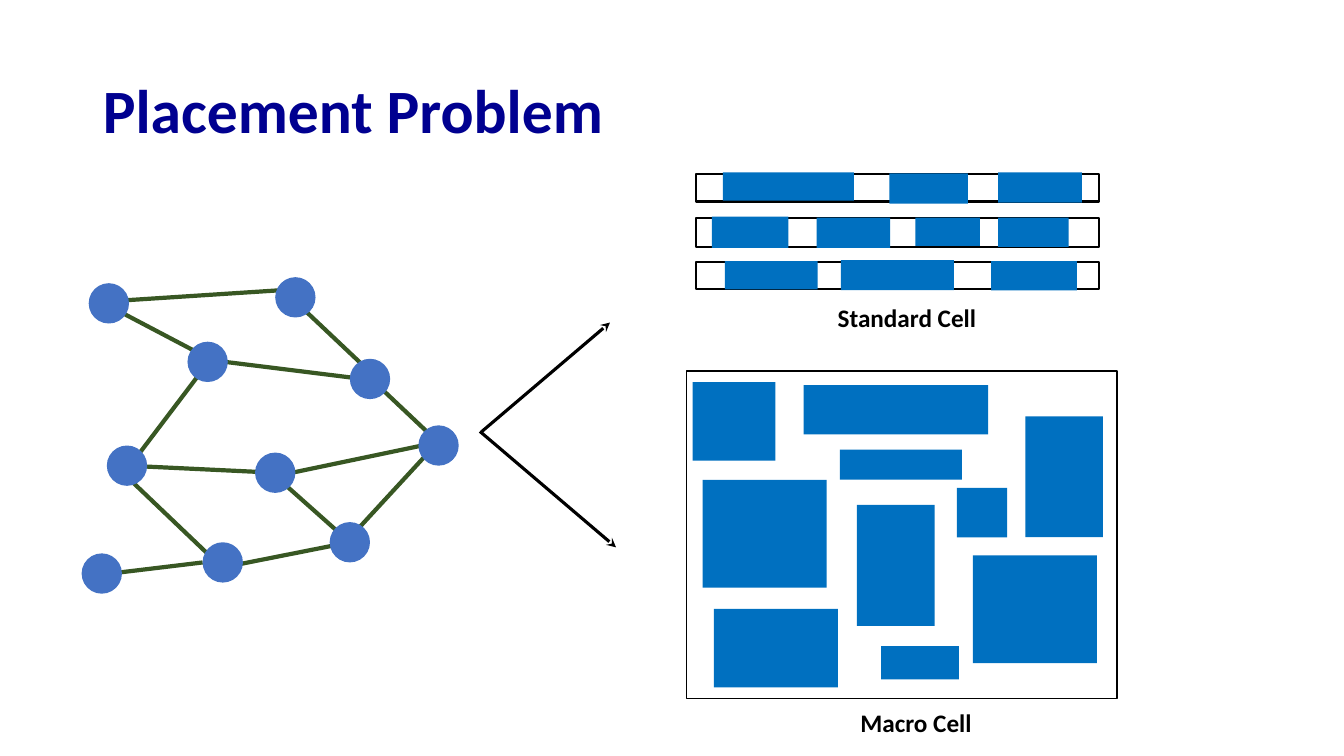
import pptx
import pptx.dml.color
import pptx.enum.shapes
import pptx.enum.text
import pptx.oxml.ns
import pptx.util
from lxml import etree
from pptx.util import Inches

COLORS = {
    "title": "000090",
    "node": "4472C4",
    "edge": "385723",
    "cell": "0070C0",
    "black": "000000",
}
FONT = "Calibri"
NODE_SIZE = 0.4

NODES = [
    (1.86, 3.39), (3.47, 3.56), (2.01, 5.38), (2.53, 4.49), (2.73, 2.75),
    (3.27, 5.18), (4.15, 4.22), (1.06, 4.42), (0.88, 2.81), (0.81, 5.49),
]
EDGES = [
    (0.93, 5.71, 2.01, 5.58), (1.08, 2.99, 2.93, 2.87), (1.09, 3.04, 2.06, 3.55),
    (1.27, 4.74, 2.15, 5.58), (1.26, 4.62, 2.73, 4.69), (1.32, 4.58, 2.07, 3.59),
    (2.15, 3.58, 3.6, 3.76), (2.95, 3.01, 3.67, 3.69), (2.75, 4.74, 3.47, 5.38),
    (2.26, 5.62, 3.47, 5.38), (3.41, 5.4, 4.35, 4.38), (2.8, 4.71, 4.33, 4.39),
    (3.66, 3.74, 4.38, 4.42),
]
ARROWS = [(4.78, 4.28, 6.05, 3.2), (4.76, 4.28, 6.11, 5.43)]
ROWS = [(6.9, 1.73, 4, 0.27), (6.9, 2.16, 4, 0.29), (6.9, 2.6, 4, 0.27)]
STANDARD_CELLS = [
    (7.17, 1.71, 1.3, 0.28), (8.82, 1.72, 0.78, 0.3), (9.9, 1.71, 0.83, 0.3),
    (7.06, 2.15, 0.76, 0.31), (8.1, 2.16, 0.73, 0.3), (9.08, 2.16, 0.64, 0.28),
    (9.9, 2.16, 0.7, 0.29),
    (7.19, 2.59, 0.92, 0.28), (8.34, 2.58, 1.12, 0.3), (9.83, 2.59, 0.85, 0.29),
]
CHIP = (6.81, 3.68, 4.27, 3.25)
MACRO_CELLS = [
    (6.87, 3.79, 0.82, 0.78), (7.08, 6.04, 1.23, 0.78), (6.97, 4.76, 1.23, 1.07),
    (7.97, 3.82, 1.83, 0.49), (8.5, 5.01, 0.77, 1.2), (10.17, 4.13, 0.77, 1.2),
    (9.65, 5.51, 1.23, 1.07), (8.74, 6.41, 0.77, 0.33), (9.49, 4.84, 0.5, 0.49),
    (8.33, 4.46, 1.21, 0.3),
]


def rgb(name):
    return pptx.dml.color.RGBColor.from_string(COLORS[name])


def style_text(paragraph, size, color):
    paragraph.font.name = FONT
    paragraph.font.size = pptx.util.Pt(size)
    paragraph.font.bold = True
    paragraph.font.color.rgb = rgb(color)


def add_title(slide, text):
    title = slide.shapes.title
    title.left, title.top = Inches(0.92), Inches(0.4)
    title.width, title.height = Inches(11.5), Inches(1.45)
    title.text_frame.text = text
    title.text_frame.vertical_anchor = pptx.enum.text.MSO_ANCHOR.MIDDLE
    heading = title.text_frame.paragraphs[0]
    heading.alignment = pptx.enum.text.PP_ALIGN.LEFT
    heading.line_spacing = 0.9
    style_text(heading, 44, "title")


def add_line(shapes, ends, color, width, arrow=False):
    line = shapes.add_connector(
        pptx.enum.shapes.MSO_CONNECTOR.STRAIGHT, *map(Inches, ends))
    line.line.color.rgb = rgb(color)
    line.line.width = pptx.util.Pt(width)
    if arrow:
        etree.SubElement(line.line._get_or_add_ln(),
                         pptx.oxml.ns.qn("a:tailEnd"), type="stealth")
    etree.SubElement(line._element.spPr, pptx.oxml.ns.qn("a:effectLst"))


def add_solid(shapes, kind, box, color):
    solid = shapes.add_shape(kind, *map(Inches, box))
    solid.shadow.inherit = False
    solid.fill.solid()
    solid.fill.fore_color.rgb = rgb(color)
    solid.line.fill.background()


def add_frame(shapes, box, width):
    frame = shapes.add_shape(
        pptx.enum.shapes.MSO_SHAPE.RECTANGLE, *map(Inches, box))
    frame.shadow.inherit = False
    frame.fill.background()
    frame.line.color.rgb = rgb("black")
    frame.line.width = pptx.util.Pt(width)


def add_label(shapes, left, top, text):
    label = shapes.add_textbox(
        Inches(left), Inches(top), Inches(3.29), Inches(0.4))
    label.text_frame.word_wrap = True
    label.text_frame.text = text
    caption = label.text_frame.paragraphs[0]
    caption.alignment = pptx.enum.text.PP_ALIGN.CENTER
    style_text(caption, 18, "black")


def add_netlist(slide):
    netlist = slide.shapes.add_group_shape().shapes
    for ends in EDGES:
        add_line(netlist, ends, "edge", 3)
    for left, top in NODES:
        add_solid(netlist, pptx.enum.shapes.MSO_SHAPE.OVAL,
                  (left, top, NODE_SIZE, NODE_SIZE), "node")


def add_placement(shapes, frames, frame_width, cells):
    for box in frames:
        add_frame(shapes, box, frame_width)
    for box in cells:
        add_solid(shapes, pptx.enum.shapes.MSO_SHAPE.RECTANGLE, box, "cell")


def main():
    deck = pptx.Presentation()
    deck.slide_width, deck.slide_height = Inches(13.33), Inches(7.5)
    slide = deck.slides.add_slide(deck.slide_layouts[5])
    add_title(slide, "Placement Problem")
    add_netlist(slide)
    for ends in ARROWS:
        add_line(slide.shapes, ends, "black", 2.25, arrow=True)
    add_placement(slide.shapes, ROWS, 1.5, STANDARD_CELLS)
    add_placement(slide.shapes, [CHIP], 1, MACRO_CELLS)
    add_label(slide.shapes, 7.35, 2.95, "Standard Cell")
    add_label(slide.shapes, 7.44, 6.97, "Macro Cell")
    deck.save("out.pptx")


if __name__ == "__main__":
    main()
